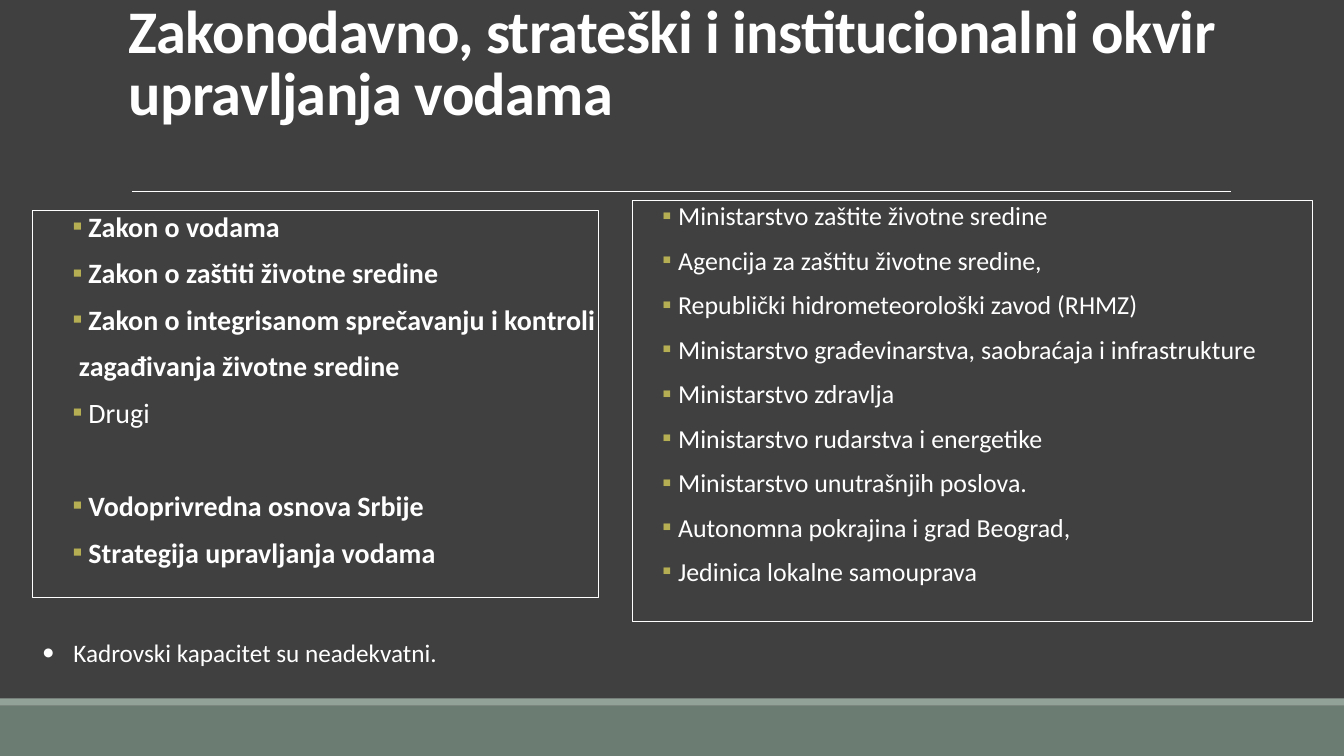
import pptx
import pptx.dml.color
import pptx.enum.shapes
import pptx.enum.text
import pptx.oxml
import pptx.oxml.ns
import pptx.util
from lxml import etree

Cm, Pt = pptx.util.Cm, pptx.util.Pt
qn = pptx.oxml.ns.qn
ANCHOR = pptx.enum.text.MSO_ANCHOR


def rgb(value):
    return pptx.dml.color.RGBColor.from_string(value)


class Deck:
    FONT = "Calibri"
    DARK, WHITE, GOLD = "404040", "FFFFFF", "B5AE53"
    GREEN, LIGHT_GREEN = "6B7D72", "93A299"

    def __init__(self, width, height):
        self.prs = pptx.Presentation()
        self.prs.slide_width, self.prs.slide_height = Cm(width), Cm(height)
        self.s = self.prs.slides.add_slide(self.prs.slide_layouts[3])
        self.s.background.fill.solid()
        self.s.background.fill.fore_color.rgb = rgb(self.DARK)

    def place(self, sp, x, y, w, h):
        sp.left, sp.top, sp.width, sp.height = Cm(x), Cm(y), Cm(w), Cm(h)

    def frame(self, sp, anchor, left=0.25, right=0.25, bottom=0.13):
        tf = sp.text_frame
        tf.word_wrap = True
        tf.auto_size = pptx.enum.text.MSO_AUTO_SIZE.NONE
        tf.vertical_anchor = anchor
        tf.margin_left, tf.margin_right = Cm(left), Cm(right)
        tf.margin_top, tf.margin_bottom = Cm(0.13), Cm(bottom)
        return tf

    def run(self, p, text, size, bold=False):
        r = p.add_run()
        r.text = text
        r.font.name, r.font.size, r.font.bold = self.FONT, Pt(size), bold
        r.font.color.rgb = rgb(self.WHITE)
        return r

    def bullet(self, p, char, color, indent, hang):
        pPr = p._p.get_or_add_pPr()
        pPr.set("marL", str(Cm(indent)))
        pPr.set("indent", str(-Cm(hang)))
        if not char:
            etree.SubElement(pPr, qn("a:buNone"))
            return
        clr = etree.SubElement(pPr, qn("a:buClr"))
        etree.SubElement(clr, qn("a:srgbClr"), val=color)
        etree.SubElement(pPr, qn("a:buFont"), typeface=self.FONT)
        etree.SubElement(pPr, qn("a:buChar"), char=char)

    def title(self, text, box, size, bottom):
        sp = self.s.shapes.title
        self.place(sp, *box)
        p = self.frame(sp, ANCHOR.BOTTOM, bottom=bottom).paragraphs[0]
        p.alignment = pptx.enum.text.PP_ALIGN.LEFT
        p.line_spacing = 0.85
        r = self.run(p, text, size, True)
        r._r.get_or_add_rPr().set("spc", "-50")

    def boxed_list(self, idx, items, box, size, left):
        """Each item is (text, bold, bulleted, space before)."""
        sp = self.s.placeholders[idx]
        self.place(sp, *box)
        sp.line.color.rgb, sp.line.width = rgb(self.WHITE), Pt(0.75)
        tf = self.frame(sp, ANCHOR.TOP, left=left, right=0)
        for i, (text, bold, bulleted, before) in enumerate(items):
            p = tf.add_paragraph() if i else tf.paragraphs[0]
            p.line_spacing = 0.8
            p.space_before, p.space_after = Pt(before), Pt(2)
            if bulleted:
                self.bullet(p, "▪", self.GOLD, 0.4, 0.4)
            else:
                self.bullet(p, None, None, 0.16, 0)
            self.run(p, text, size, bold)

    def note(self, text, box, size):
        sp = self.s.shapes.add_textbox(*map(Cm, box))
        p = self.frame(sp, ANCHOR.TOP).paragraphs[0]
        self.bullet(p, "•", self.WHITE, 0.79, 0.79)
        self.run(p, text, size)

    def bar(self, box, color):
        kind = pptx.enum.shapes.MSO_SHAPE.RECTANGLE
        sp = self.s.shapes.add_shape(kind, *map(Cm, box))
        sp.shadow.inherit = False
        sp.fill.solid()
        sp.fill.fore_color.rgb = rgb(color)
        sp.line.fill.background()

    def rule(self, x1, x2, y):
        kind = pptx.enum.shapes.MSO_CONNECTOR.STRAIGHT
        cx = self.s.shapes.add_connector(kind, Cm(x1), Cm(y), Cm(x2), Cm(y))
        cx.line.color.rgb, cx.line.width = rgb(self.WHITE), Pt(0.5)
        etree.SubElement(cx._element.spPr, qn("a:effectLst"))


def main():
    width, height = 33.87, 19.05
    deck = Deck(width, height)

    # Footer bands and title rule
    deck.bar((0, 17.78, width, 1.27), deck.GREEN)
    deck.bar((0, 17.6, width, 0.18), deck.LIGHT_GREEN)
    deck.rule(3.33, 31.01, 4.83)

    # Title
    deck.title("Zakonodavno, strateški i institucionalni okvir upravljanja vodama",
               (3, 1.02, 27.94, 4.04), 43.2, 1.85)

    # Laws and strategies; the wide gap parts the two groups
    laws = [
        ("Zakon o vodama", True, True, 12),
        ("Zakon o zaštiti životne sredine", True, True, 12),
        ("Zakon o integrisanom sprečavanju i kontroli", True, True, 12),
        ("zagađivanja životne sredine", True, False, 12),
        ("Drugi", False, True, 12),
        ("Vodoprivredna osnova Srbije", True, True, 45.5),
        ("Strategija upravljanja vodama", True, True, 12),
    ]
    deck.boxed_list(1, laws, (0.81, 5.31, 14.28, 9.75), 20, 1.02)

    # Institutions
    institutions = [
        "Ministarstvo zaštite životne sredine",
        "Agencija za zaštitu životne sredine,",
        "Republički hidrometeorološki zavod (RHMZ)",
        "Ministarstvo građevinarstva, saobraćaja i infrastrukture",
        "Ministarstvo zdravlja",
        "Ministarstvo rudarstva i energetike",
        "Ministarstvo unutrašnjih poslova.",
        "Autonomna pokrajina i grad Beograd,",
        "Jedinica lokalne samouprava",
    ]
    deck.boxed_list(2, [(name, False, True, 12) for name in institutions],
                    (15.93, 5.06, 17.14, 10.59), 18.5, 0.76)

    # Closing remark
    deck.note("Kadrovski kapacitet su neadekvatni.", (0.81, 15.93, 33, 1.02), 18)

    deck.prs.save("out.pptx")


if __name__ == "__main__":
    main()
